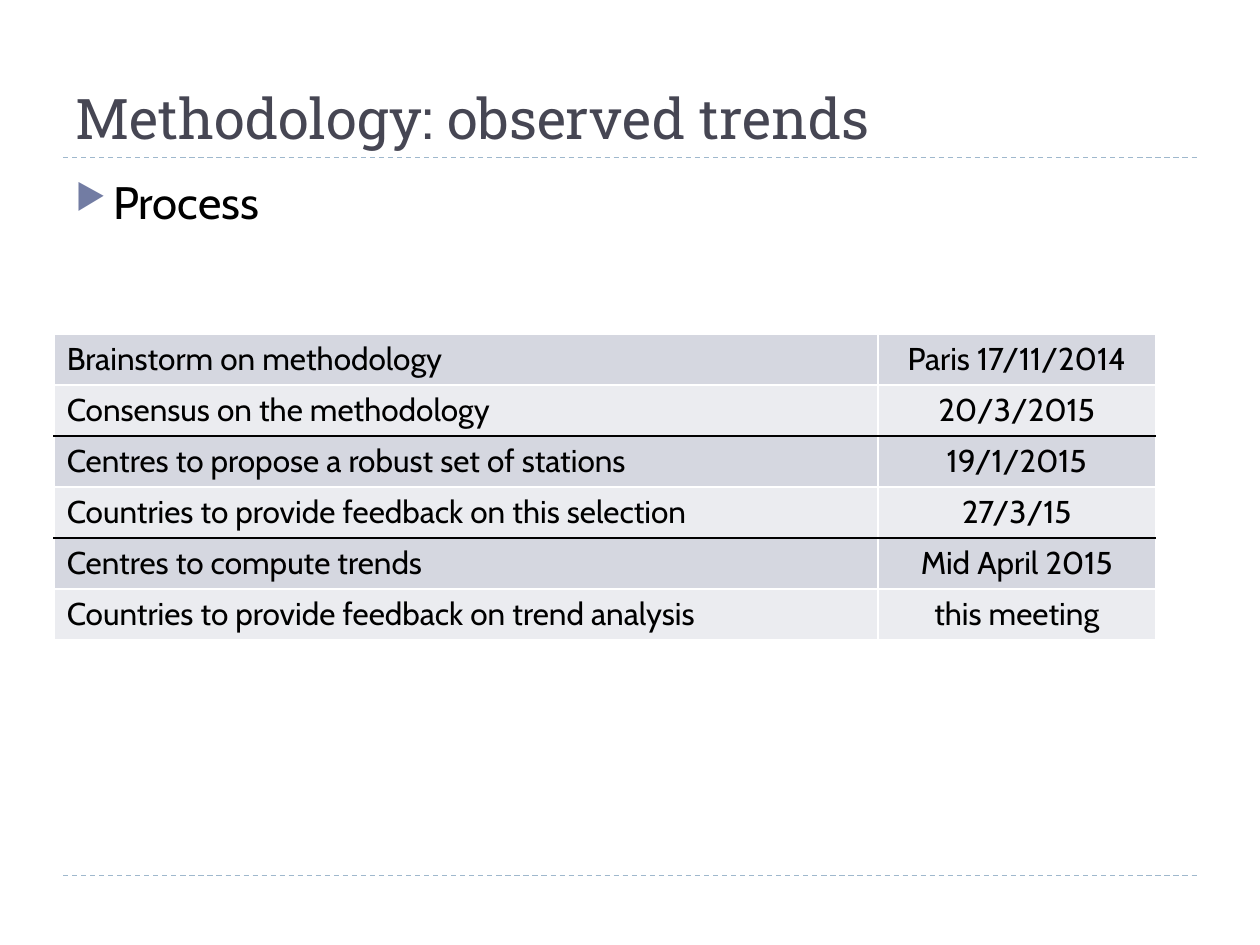
from lxml import etree
from pptx import Presentation, util as u
from pptx.dml.color import RGBColor
from pptx.enum import dml, shapes, text
from pptx.oxml import parse_xml
from pptx.oxml.ns import nsdecls, qn

# Content
TITLE = "Methodology: observed trends"
BULLET = "Process"
STEPS = [
    ("Brainstorm on methodology", "Paris 17/11/2014"),
    ("Consensus on the methodology", "20/3/2015"),
    ("Centres to propose a robust set of stations", "19/1/2015"),
    ("Countries to provide feedback on this selection", "27/3/15"),
    ("Centres to compute trends", "Mid April 2015"),
    ("Countries to provide feedback on trend analysis", "this meeting"),
]
PHASE_ENDS = (2, 4)  # a black rule follows these rows

# Format
BLACK, WHITE = RGBColor(0, 0, 0), RGBColor(255, 255, 255)
SLATE = RGBColor(0x46, 0x46, 0x53)
ACCENT = RGBColor(0x72, 0x7C, 0xA3)
RULE = RGBColor(0x9F, 0xB8, 0xCD)
BANDS = RGBColor(0xD5, 0xD7, 0xE0), RGBColor(0xEB, 0xEC, 0xF0)
TITLE_FONT = dict(name="Roboto Slab", size=u.Pt(32), color=SLATE)
BULLET_FONT = dict(name="Cabin", size=u.Pt(26), color=BLACK)
CELL_FONT = dict(name="Cabin", size=u.Pt(18), color=BLACK)

# Layout in inches
WIDTH, HEIGHT, MARGIN = 10, 7.5, 0.5
INNER = WIDTH - 2 * MARGIN
RULE_TOPS = (1.25, 6.95)
TABLE_LEFT, TABLE_TOP, ROW_HEIGHT = 0.43, 2.65, 0.405
COLUMNS = (6.54, 2.2)


def write(frame, words, font, align=text.PP_ALIGN.LEFT):
    para = frame.paragraphs[0]
    para.alignment = align
    span = para.add_run()
    span.text = words
    for key, value in font.items():
        if key == "color":
            span.font.color.rgb = value
        else:
            setattr(span.font, key, value)
    return para


def place(shape, *box):
    for key, value in zip(("left", "top", "width", "height"), box):
        setattr(shape, key, u.Inches(value))


def border(cell, side, color):
    cell._tc.get_or_add_tcPr().append(parse_xml(
        f'<a:{side} {nsdecls("a")} w="12700"><a:solidFill>'
        f'<a:srgbClr val="{color}"/></a:solidFill></a:{side}>'))


deck = Presentation()
deck.slide_width, deck.slide_height = u.Inches(WIDTH), u.Inches(HEIGHT)
page = deck.slides.add_slide(deck.slide_layouts[5])

# Dashed rules
for top in RULE_TOPS:
    y = u.Inches(top)
    rule = page.shapes.add_connector(
        shapes.MSO_CONNECTOR.STRAIGHT,
        u.Inches(MARGIN), y, u.Inches(MARGIN + INNER), y)
    rule.line.color.rgb = RULE
    rule.line.width = u.Pt(0.75)
    rule.line.dash_style = dml.MSO_LINE.DASH
    etree.SubElement(rule._element.spPr, qn("a:effectLst"))

# Title
title = page.shapes.title
place(title, MARGIN, 0.17, INNER, 1.08)
title.text_frame.vertical_anchor = text.MSO_ANCHOR.BOTTOM
write(title.text_frame, TITLE, TITLE_FONT)

# Bulleted heading
body = page.shapes.add_textbox(0, 0, 0, 0)
place(body, MARGIN, 1.33, INNER, 5.4)
body.text_frame.word_wrap = True
para = write(body.text_frame, BULLET, BULLET_FONT)
para.space_before = u.Pt(6)
props = para._p.get_or_add_pPr()
props.set("marL", str(u.Inches(0.3)))
props.set("indent", str(-u.Inches(0.3)))
for bullet in (f'<a:buClr {nsdecls("a")}><a:srgbClr val="{ACCENT}"/></a:buClr>',
               f'<a:buSzPct {nsdecls("a")} val="76000"/>',
               f'<a:buChar {nsdecls("a")} char="▶"/>'):
    props.append(parse_xml(bullet))

# Schedule table
holder = page.shapes.add_table(
    len(STEPS), len(COLUMNS), u.Inches(TABLE_LEFT), u.Inches(TABLE_TOP),
    u.Inches(sum(COLUMNS)), u.Inches(ROW_HEIGHT * len(STEPS)))
table = holder.table
table.first_row = False
for column, width in zip(table.columns, COLUMNS):
    column.width = u.Inches(width)
for r, step in enumerate(STEPS):
    table.rows[r].height = u.Inches(ROW_HEIGHT)
    above, below = (BLACK if edge in PHASE_ENDS else WHITE for edge in (r, r + 1))
    for c, words in enumerate(step):
        cell = table.cell(r, c)
        align = text.PP_ALIGN.CENTER if c else text.PP_ALIGN.LEFT
        write(cell.text_frame, words, CELL_FONT, align)
        for side, color in (("lnL", WHITE), ("lnR", WHITE),
                            ("lnT", above), ("lnB", below)):
            border(cell, side, color)
        cell.fill.solid()
        cell.fill.fore_color.rgb = BANDS[r % 2]

deck.save("out.pptx")
